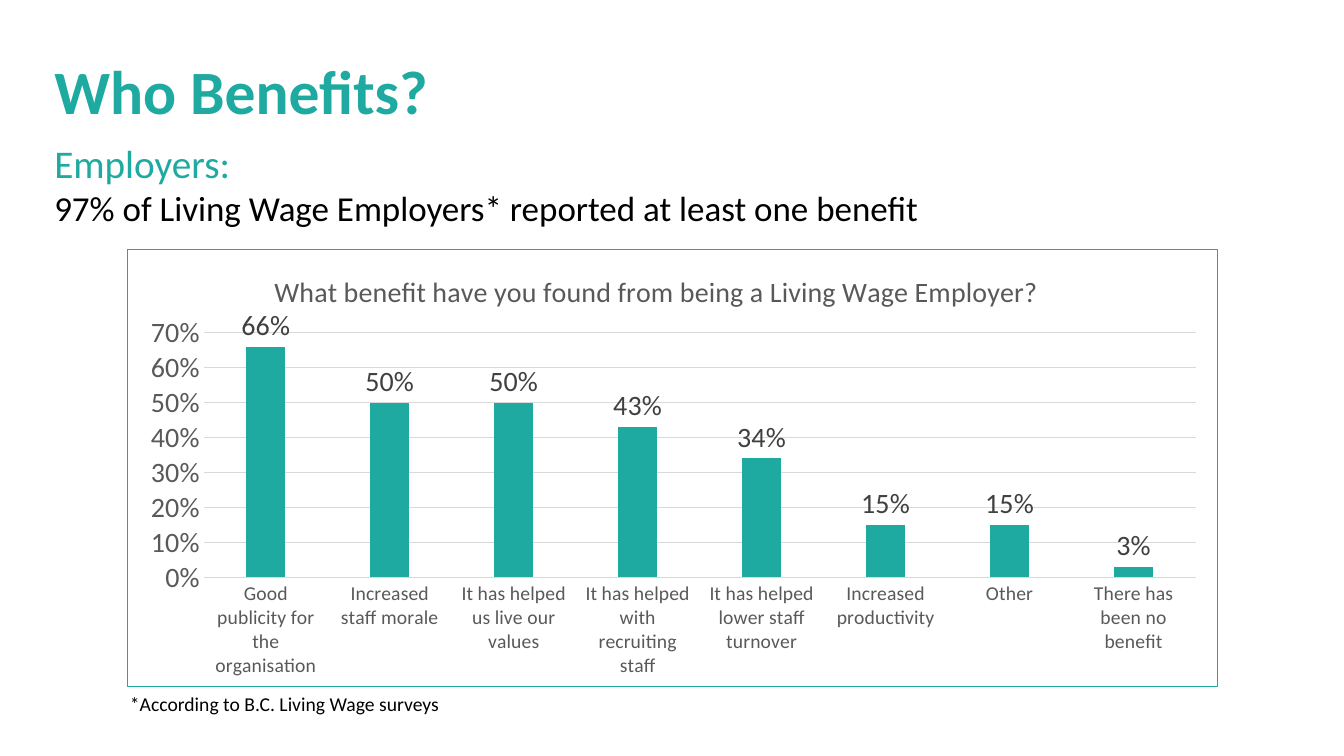
from lxml import etree
from pptx import Presentation
from pptx.chart.data import CategoryChartData
from pptx.dml.color import RGBColor
from pptx.enum.chart import XL_CHART_TYPE, XL_LABEL_POSITION, XL_TICK_MARK
from pptx.oxml import parse_xml
from pptx.oxml.ns import nsdecls, qn
from pptx.util import Inches, Pt

COLUMNS = XL_CHART_TYPE.COLUMN_CLUSTERED
OUTSIDE_END = XL_LABEL_POSITION.OUTSIDE_END
NO_TICKS = XL_TICK_MARK.NONE

TEAL = RGBColor(0x1E, 0xAA, 0xA1)
BLACK = RGBColor(0x00, 0x00, 0x00)
GREY = RGBColor(0x59, 0x59, 0x59)
DARK_GREY = RGBColor(0x40, 0x40, 0x40)
PALE_GREY = RGBColor(0xD9, 0xD9, 0xD9)

FONT = "Calibri"
WIDTH, HEIGHT = Inches(13.33), Inches(7.5)
LEFT_MARGIN = 0.44

BENEFITS = {
    "Good publicity for the organisation": 0.66,
    "Increased staff morale": 0.5,
    "It has helped us live our values": 0.5,
    "It has helped with recruiting staff": 0.43,
    "It has helped lower staff turnover": 0.34,
    "Increased productivity": 0.15,
    "Other": 0.15,
    "There has been no benefit": 0.03,
}


def style_font(font, size, color, bold=False, name=FONT):
    font.name = name
    font.size = Pt(size)
    font.bold = bold
    font.color.rgb = color


def add_text(slide, lines, left, top, width, height):
    """Add a text box; each line is a (text, font format) pair."""
    box = slide.shapes.add_textbox(
        Inches(left), Inches(top), Inches(width), Inches(height))
    frame = box.text_frame
    frame.word_wrap = True
    for index, (text, font_format) in enumerate(lines):
        para = frame.add_paragraph() if index else frame.paragraphs[0]
        span = para.add_run()
        span.text = text
        style_font(span.font, **font_format)


def make_layout(x, y, **extent):
    """Return a manual chart layout in shares of the chart's size."""
    layout = parse_xml(f"<c:layout {nsdecls('c')}><c:manualLayout/></c:layout>")
    settings = {"xMode": "edge", "yMode": "edge", "x": x, "y": y, **extent}
    if extent:
        settings = {"layoutTarget": "inner", **settings}
    for name, value in settings.items():
        etree.SubElement(layout[0], qn(f"c:{name}")).set("val", str(value))
    return layout


def replace_layout(parent, layout, position):
    for old_layout in parent.findall(qn("c:layout")):
        parent.remove(old_layout)
    parent.insert(position, layout)


def add_chart_border(chart, color, width):
    chart_element = chart.element.find(qn("c:chart"))
    chart_element.addnext(parse_xml(
        f"<c:spPr {nsdecls('c', 'a')}><a:noFill/><a:ln w=\"{Pt(width)}\">"
        f"<a:solidFill><a:srgbClr val=\"{color}\"/></a:solidFill></a:ln></c:spPr>"))


def style_axis(axis, size):
    axis.major_tick_mark = axis.minor_tick_mark = NO_TICKS
    style_font(axis.tick_labels.font, size, GREY)


def style_line(line, color, width=0.75):
    line.color.rgb = color
    line.width = Pt(width)


def add_chart_title(chart, text):
    chart.has_title = True
    title = chart.chart_title
    para = title.text_frame.paragraphs[0]
    span = para.add_run()
    span.text = text
    style_font(span.font, 20, GREY)
    title.include_in_layout = False
    replace_layout(title._element, make_layout(0.13, 0.04), 1)


def add_benefit_chart(slide):
    data = CategoryChartData(number_format="0%")
    data.categories = list(BENEFITS)
    data.add_series("Series 1", list(BENEFITS.values()))
    chart = slide.shapes.add_chart(
        COLUMNS, Inches(1.26), Inches(2.47), Inches(10.82), Inches(4.35), data).chart
    style_font(chart.font, 10, BLACK, name="Arial")
    chart.has_legend = False
    add_chart_border(chart, TEAL, 0.75)
    add_chart_title(chart, "What benefit have you found from being a Living Wage Employer?")

    style_axis(chart.category_axis, 14)
    style_line(chart.category_axis.format.line, PALE_GREY)

    shares = chart.value_axis
    style_axis(shares, 20)
    shares.minimum_scale, shares.maximum_scale, shares.major_unit = 0, 0.7, 0.1
    shares.tick_labels.number_format = "0%"
    shares.tick_labels.number_format_is_linked = False
    shares.format.line.fill.background()
    style_line(shares.major_gridlines.format.line, PALE_GREY)

    plot = chart.plots[0]
    plot.vary_by_categories = False
    plot.gap_width, plot.overlap = 219, -27
    fill = plot.series[0].format.fill
    fill.solid()
    fill.fore_color.rgb = TEAL
    labels = plot.series[0].data_labels
    labels.show_value = True
    labels.number_format = "0%"
    labels.number_format_is_linked = False
    labels.position = OUTSIDE_END
    style_font(labels.font, 20, DARK_GREY)

    plot_area = chart.element.find(".//" + qn("c:plotArea"))
    replace_layout(plot_area, make_layout(0.07, 0.19, w=0.91, h=0.56), 0)


def main():
    deck = Presentation()
    deck.slide_width, deck.slide_height = WIDTH, HEIGHT
    slide = deck.slides.add_slide(deck.slide_layouts[6])
    add_text(slide, [
        ("Employers:", dict(size=28, color=TEAL)),
        ("97% of Living Wage Employers* reported at least one benefit",
         dict(size=25, color=BLACK)),
    ], LEFT_MARGIN, 1.33, 12.67, 0.99)
    add_text(slide, [("Who Benefits?", dict(size=44, color=TEAL, bold=True))],
             LEFT_MARGIN, 0.48, 5.17, 0.84)
    add_benefit_chart(slide)
    add_text(slide, [("*According to B.C. Living Wage surveys",
                      dict(size=14, color=BLACK))], 1.19, 6.82, 4.85, 0.34)
    deck.save("out.pptx")


if __name__ == "__main__":
    main()
